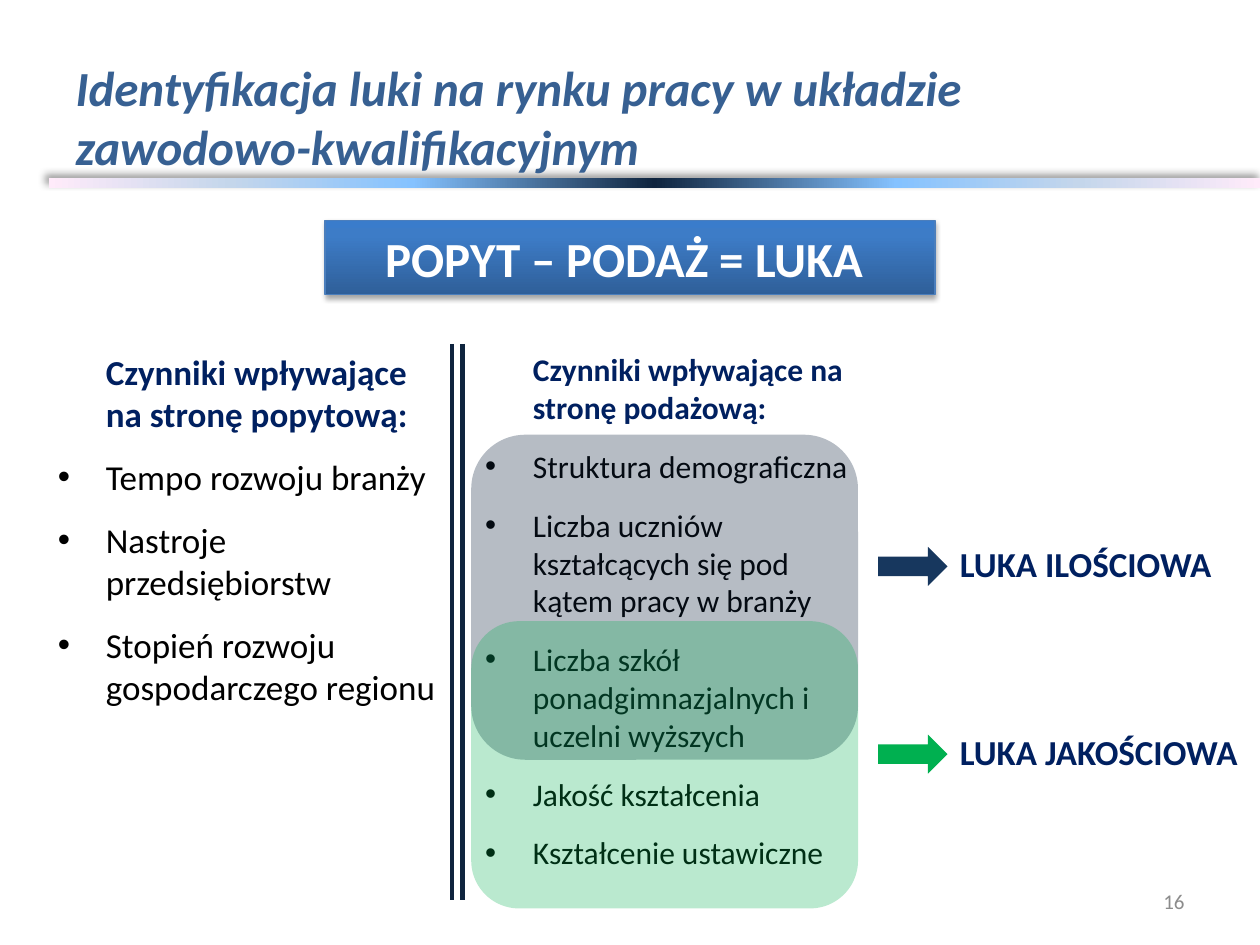
from lxml.etree import SubElement
from pptx import Presentation
from pptx.dml.color import RGBColor
from pptx.enum.shapes import MSO_CONNECTOR, MSO_SHAPE
from pptx.enum.text import MSO_ANCHOR, MSO_AUTO_SIZE, PP_ALIGN
from pptx.oxml.ns import qn
from pptx.util import Inches, Pt

THEME = {
    "font": "Calibri",
    "title": "376092", "heading": "002060", "text": "000000", "white": "FFFFFF",
    "number": "8C8C8C", "navy": "0F243E", "arrow": "17375E", "green": "00B050",
    "banner_line": "4B7EBC",
    "rule": [(0, "FFEBFA"), (15, "C4D6EB"), (30, "85C2FF"), (50, "0F243E"),
             (70, "85C2FF"), (85, "C4D6EB"), (100, "FFEBFA")],
    "banner": [(0, "2F5F99"), (80, "3D7CC7"), (100, "3A7CCB")],
    "large": 28, "medium": 20, "small": 18, "tiny": 12,
}
COLUMNS, ROWS = 100, 75

deck = Presentation()
deck.slide_width, deck.slide_height = Inches(10), Inches(7.5)
column, row = deck.slide_width / COLUMNS, deck.slide_height / ROWS


def area(left, top, width, height):
    """Turn grid columns and rows into left, top, width and height."""
    return int(left * column), int(top * row), int(width * column), int(height * row)


def shade(shape, stops, angle, alpha, blur, distance, direction):
    """Give a shape a gradient of several stops and an outer shadow."""
    shape.fill.gradient()
    shape.fill.gradient_angle = angle
    properties = shape.element.spPr
    stop_list = properties.find(qn("a:gradFill")).find(qn("a:gsLst"))
    for old_stop in list(stop_list):
        stop_list.remove(old_stop)
    for position, colour in stops:
        stop = SubElement(stop_list, qn("a:gs"), pos=str(position * 1000))
        SubElement(stop, qn("a:srgbClr"), val=colour)
    shape.shadow.inherit = False
    shadow = SubElement(properties.find(qn("a:effectLst")), qn("a:outerShdw"),
                        blurRad=str(Pt(blur)), dist=str(Pt(distance)),
                        dir=str(direction * 60000), algn="ctr", rotWithShape="0")
    colour = SubElement(shadow, qn("a:srgbClr"), val="000000")
    SubElement(colour, qn("a:alpha"), val=str(alpha * 1000))


page = deck.slides.add_slide(deck.slide_layouts.get_by_name("Comparison"))
holders = {holder.placeholder_format.idx: holder for holder in page.placeholders}
title, banner, demand, supply = (holders[index] for index in (0, 1, 2, 4))
holders[3].element.getparent().remove(holders[3].element)

# Rule under the title, behind everything else
rule = page.shapes.add_shape(MSO_SHAPE.RECTANGLE, *area(3.9, 14.1, 96.1, 0.8))
rule.line.fill.background()
shade(rule, THEME["rule"], 0, 40, 4, 3, 225)
page.shapes.element.remove(rule.element)
page.shapes.element.insert(2, rule.element)

# Title, banner and page number
number = page.shapes.add_textbox(*area(71.7, 69.5, 23.3, 4))
banner.line.color.rgb = RGBColor.from_string(THEME["banner_line"])
banner.line.width = Pt(0.75)
shade(banner, THEME["banner"], 90, 35, 3.1, 1.8, 90)
for box, place, text, align, size, colour, bold in (
    (title, (5, 3, 90, 12.5),
     "Identyfikacja luki na rynku pracy w układzie \vzawodowo-kwalifikacyjnym",
     PP_ALIGN.LEFT, "large", "title", True),
    (banner, (25.8, 17.5, 48.4, 5.9), "POPYT – PODAŻ = LUKA ",
     PP_ALIGN.CENTER, "large", "white", True),
    (number, (71.7, 69.5, 23.3, 4), "16", PP_ALIGN.RIGHT, "tiny", "number", False),
):
    box.left, box.top, box.width, box.height = area(*place)
    frame = box.text_frame
    frame.text = text
    frame.word_wrap = True
    frame.auto_size = MSO_AUTO_SIZE.NONE
    frame.vertical_anchor = MSO_ANCHOR.MIDDLE
    para = frame.paragraphs[0]
    para.alignment = align
    para.space_before = Pt(0)
    para.font.name, para.font.size = THEME["font"], Pt(THEME[size])
    para.font.bold, para.font.italic = bold, box is title
    para.font.color.rgb = RGBColor.from_string(THEME[colour])

# Lists of demand and supply factors
for box, place, size, lines in (
    (demand, (3.6, 27.3, 32.8, 38.3), "medium",
     ("Czynniki wpływające na stronę popytową:", "Tempo rozwoju branży",
      "Nastroje przedsiębiorstw", "Stopień rozwoju gospodarczego regionu")),
    (supply, (37.5, 27.3, 32.2, 38.3), "small",
     ("Czynniki wpływające na stronę podażową:", "Struktura demograficzna",
      "Liczba uczniów kształcących się pod kątem pracy w branży",
      "Liczba szkół ponadgimnazjalnych i uczelni wyższych",
      "Jakość kształcenia", "Kształcenie ustawiczne")),
):
    box.left, box.top, box.width, box.height = area(*place)
    frame = box.text_frame
    frame.text = "\n".join(lines)
    frame.auto_size = MSO_AUTO_SIZE.NONE
    for index, para in enumerate(frame.paragraphs):
        heading = index == 0
        para.space_before = para.space_after = Pt(6)
        para.font.name, para.font.size = THEME["font"], Pt(THEME[size])
        para.font.bold = heading
        para.font.color.rgb = RGBColor.from_string(THEME["heading" if heading else "text"])
        properties = para._p.get_or_add_pPr()
        properties.set("marL", str(Inches(0.38)))
        properties.set("indent", str(0 if heading else -Inches(0.38)))
        if heading:
            properties.insert_element_before(
                properties.makeelement(qn("a:buNone")), "a:tabLst", "a:defRPr", "a:extLst")

# Overlapping translucent groups of supply factors
for kind, top, height, colour, alpha in (
    (MSO_SHAPE.FLOWCHART_ALTERNATE_PROCESS, 34.5, 25.8, "navy", 30),
    (MSO_SHAPE.ROUNDED_RECTANGLE, 49.3, 22.8, "green", 27),
):
    group = page.shapes.add_shape(kind, *area(37.4, top, 30.7, height))
    group.shadow.inherit = False
    group.line.fill.background()
    group.fill.solid()
    group.fill.fore_color.rgb = RGBColor.from_string(THEME[colour])
    fill_colour = group.element.spPr.find(qn("a:solidFill")).find(qn("a:srgbClr"))
    SubElement(fill_colour, qn("a:alpha"), val=str(alpha * 1000))

# Arrows to the two kinds of gap
for middle, colour, text, width in (
    (44.9, "arrow", "LUKA ILOŚCIOWA", 22.2),
    (59.8, "green", "LUKA JAKOŚCIOWA", 24.3),
):
    arrow = page.shapes.add_shape(MSO_SHAPE.RIGHT_ARROW, *area(69.7, middle - 1.5, 5.5, 3.1))
    arrow.shadow.inherit = False
    arrow.line.fill.background()
    arrow.fill.solid()
    arrow.fill.fore_color.rgb = RGBColor.from_string(THEME[colour])
    label = page.shapes.add_textbox(*area(75.2, middle - 2.3, width, 4.4))
    label.text_frame.text = text
    label.text_frame.word_wrap = False
    label.text_frame.auto_size = MSO_AUTO_SIZE.SHAPE_TO_FIT_TEXT
    para = label.text_frame.paragraphs[0]
    para.font.name, para.font.size = THEME["font"], Pt(THEME["medium"])
    para.font.bold = True
    para.font.color.rgb = RGBColor.from_string(THEME["heading"])

# Double divider between the lists
for left in (35.9, 36.7):
    x, top, _, height = area(left, 27.3, 0, 44.1)
    divider = page.shapes.add_connector(MSO_CONNECTOR.STRAIGHT, x, top, x, top + height)
    divider.line.color.rgb = RGBColor.from_string(THEME["navy"])
    divider.line.width = Pt(2.5)
    SubElement(divider.element.spPr, qn("a:effectLst"))

deck.save("out.pptx")
